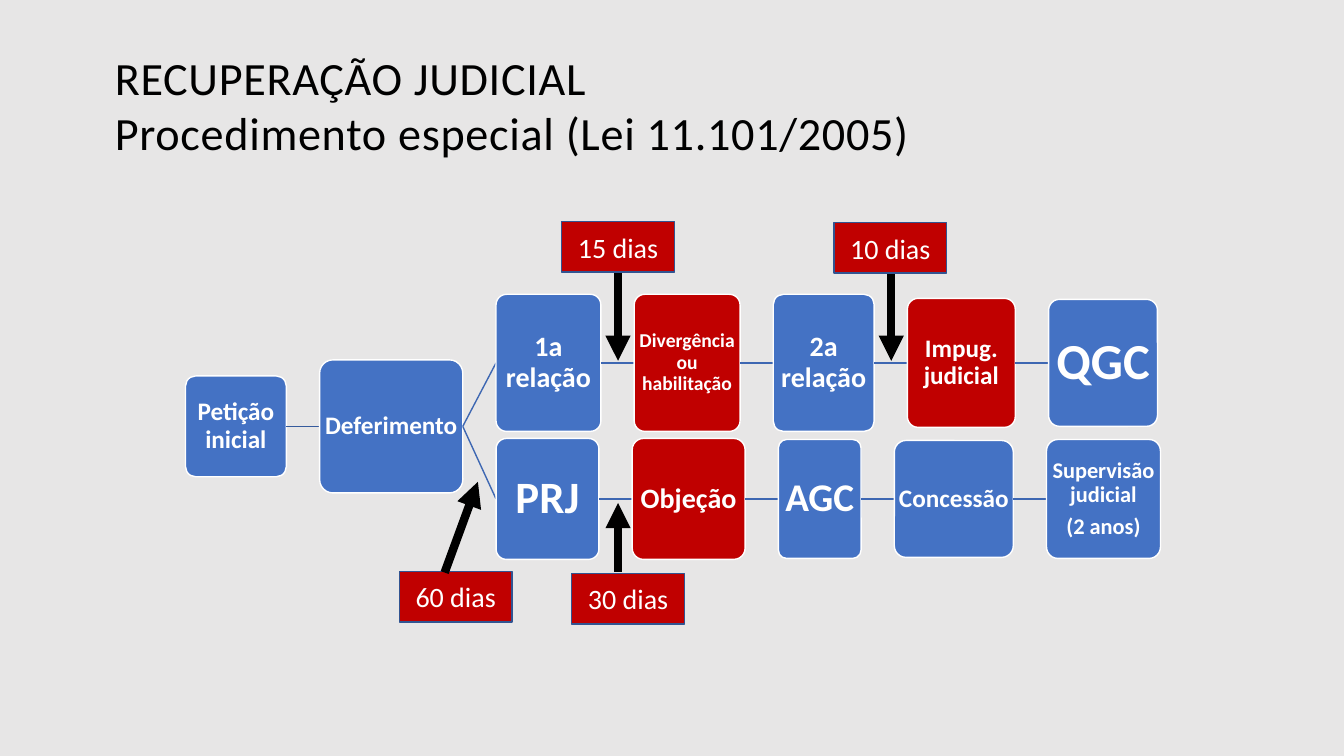
import pptx
import pptx.util
import pptx.dml.color
import pptx.enum.shapes
import pptx.enum.text
import pptx.oxml.ns
import lxml.etree

Inches = pptx.util.Inches
Pt = pptx.util.Pt
RGBColor = pptx.dml.color.RGBColor
SHAPE = pptx.enum.shapes.MSO_SHAPE
ALIGN = pptx.enum.text.PP_ALIGN
ANCHOR = pptx.enum.text.MSO_ANCHOR

BACKGROUND = RGBColor(0xE7, 0xE6, 0xE6)
BLACK = RGBColor(0, 0, 0)
WHITE = RGBColor(0xFF, 0xFF, 0xFF)
BLUE = RGBColor(0x44, 0x72, 0xC4)
RED = RGBColor(0xC0, 0, 0)
STEM_LINE = RGBColor(0x36, 0x5B, 0x9D)
BRANCH_LINE = RGBColor(0x3E, 0x67, 0xB2)
LABEL_LINE = RGBColor(0x32, 0x54, 0x91)

GAP = 0.33

STEM = [("Petição inicial", 1, 1, 18, BLUE), ("Deferimento", 1.42, 1.32, 18, BLUE)]
CREDITORS = [
    ("1a relação", 1.04, 1.36, 20, BLUE),
    ("Divergência ou habilitação", 1.05, 1.36, 14, RED),
    ("2a relação", 1, 1.36, 20, BLUE),
    ("Impug. judicial", 1.07, 1.28, 18, RED),
    ("QGC", 1.08, 1.26, 36, BLUE),
]
PLAN = [
    ("PRJ", 1.02, 1.2, 32, BLUE),
    ("Objeção", 1.12, 1.2, 20, RED),
    ("AGC", 0.82, 1.18, 28, BLUE),
    ("Concessão", 1.18, 1.16, 18, BLUE),
    ("Supervisão judicial\n(2 anos)", 1.13, 1.18, 16, BLUE),
]
DEADLINES = [
    ("60 dias", 3.96, 5.67, (4.41, 5.68), (4.74, 4.78)),
    ("30 dias", 5.67, 5.69, (6.13, 5.67), (6.13, 4.99)),
    ("15 dias", 5.57, 2.2, (6.13, 2.71), (6.13, 3.58)),
    ("10 dias", 8.27, 2.21, (8.84, 2.72), (8.84, 3.58)),
]


def write(tf, text, size, color=WHITE, bold=False, align=ALIGN.CENTER,
          anchor=ANCHOR.MIDDLE, leading=None, after=0, tracking=0):
    """Fill a text frame, one paragraph per line of text."""
    tf.word_wrap = True
    tf.vertical_anchor = anchor
    for i, line in enumerate(text.split("\n")):
        p = tf.add_paragraph() if i else tf.paragraphs[0]
        p.alignment = align
        p.line_spacing = leading
        p.space_after = Pt(after)
        r = p.add_run()
        r.text = line
        r.font.name = "Calibri"
        r.font.size = Pt(size)
        r.font.bold = bold
        r.font.color.rgb = color
        if tracking:
            r._r.get_or_add_rPr().set("spc", str(int(tracking * 100)))


def add_box(s, kind, x, y, w, h, fill, line):
    """Add a filled, outlined shape without a shadow."""
    sp = s.shapes.add_shape(kind, Inches(x), Inches(y), Inches(w), Inches(h))
    sp.shadow.inherit = False
    sp.fill.solid()
    sp.fill.fore_color.rgb = fill
    sp.line.color.rgb = line
    sp.line.width = Pt(1)
    return sp


def add_link(s, start, end, color, width=1, arrow=False):
    """Draw a straight line between two points, with an arrowhead if asked."""
    cx = s.shapes.add_connector(pptx.enum.shapes.MSO_CONNECTOR.STRAIGHT,
                                *(Inches(v) for v in start + end))
    cx.line.color.rgb = color
    cx.line.width = Pt(width)
    if arrow:
        lxml.etree.SubElement(cx.line._get_or_add_ln(),
                              pptx.oxml.ns.qn("a:tailEnd"), type="triangle")
    lxml.etree.SubElement(cx._element.spPr, pptx.oxml.ns.qn("a:effectLst"))


def add_title(s, x, y, w, h):
    """Place the two-line title."""
    sp = s.shapes.add_textbox(Inches(x), Inches(y), Inches(w), Inches(h))
    write(sp.text_frame, "RECUPERAÇÃO JUDICIAL\nProcedimento especial (Lei 11.101/2005)",
          33, BLACK, align=ALIGN.LEFT, anchor=ANCHOR.TOP, tracking=0.5)


def add_chain(s, steps, x, middle, line, origin=None):
    """Place linked steps from x along a middle line and return the end point."""
    for text, w, h, size, fill in steps:
        if origin:
            add_link(s, origin, (x, middle), line)
        sp = add_box(s, SHAPE.ROUNDED_RECTANGLE, x, middle - h / 2, w, h, fill, WHITE)
        sp.adjustments[0] = 0.1
        tf = sp.text_frame
        tf.margin_left = tf.margin_right = tf.margin_top = tf.margin_bottom = 0
        write(tf, text, size, bold=True, leading=0.9, after=size * 0.35)
        origin = (x + w, middle)
        x += w + GAP
    return origin


def add_flow(s, x, y):
    """Place the stem and its two branches around the middle line y."""
    fork = add_chain(s, STEM, x, y, STEM_LINE)
    for steps, offset in ((CREDITORS, -0.63), (PLAN, 0.72)):
        add_chain(s, steps, fork[0] + GAP, y + offset, BRANCH_LINE, fork)


def add_deadline(s, text, x, y, start, end):
    """Place a deadline label and the arrow to its step."""
    sp = add_box(s, SHAPE.RECTANGLE, x, y, 1.12, 0.5, RED, LABEL_LINE)
    write(sp.text_frame, text, 20)
    add_link(s, start, end, BLACK, 6, arrow=True)


def main():
    """Build and save the slide."""
    prs = pptx.Presentation()
    prs.slide_width = Inches(13.33)
    prs.slide_height = Inches(7.5)
    s = prs.slides.add_slide(prs.slide_layouts[6])
    s.background.fill.solid()
    s.background.fill.fore_color.rgb = BACKGROUND
    add_title(s, 1.04, 0.44, 10.01, 1.77)
    add_flow(s, 1.84, 4.23)
    for deadline in DEADLINES:
        add_deadline(s, *deadline)
    prs.save("out.pptx")


if __name__ == "__main__":
    main()
